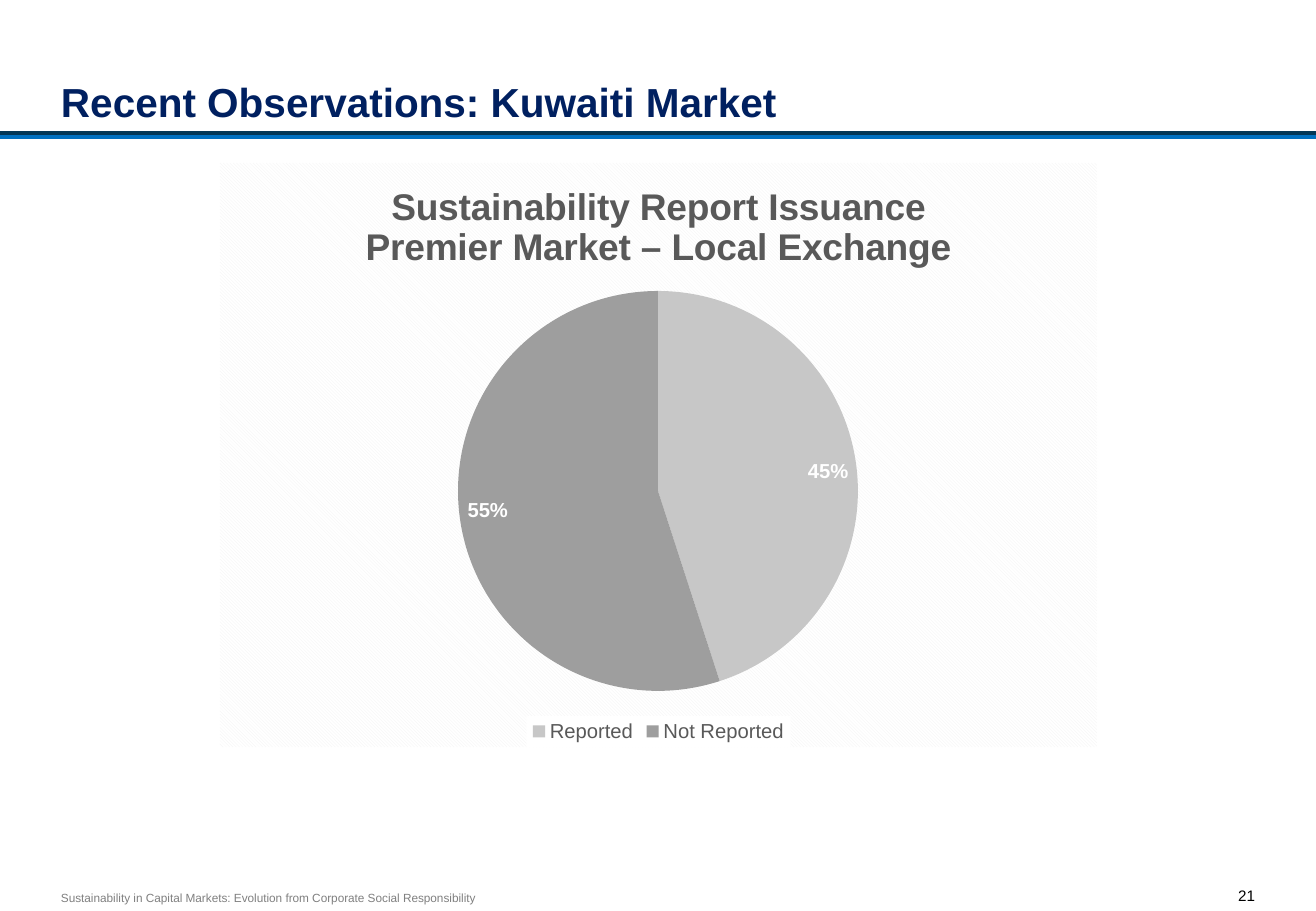
from dataclasses import dataclass

from lxml import etree
from pptx import Presentation
from pptx.chart.data import CategoryChartData
from pptx.dml.color import RGBColor
from pptx.enum.chart import XL_CHART_TYPE, XL_LABEL_POSITION, XL_LEGEND_POSITION
from pptx.enum.shapes import MSO_CONNECTOR
from pptx.enum.text import MSO_ANCHOR, PP_ALIGN
from pptx.oxml import parse_xml
from pptx.oxml.ns import nsdecls, qn
from pptx.slide import Slide
from pptx.util import Emu, Pt

PIE = XL_CHART_TYPE.PIE
INSIDE_END = XL_LABEL_POSITION.INSIDE_END
LEGEND_BOTTOM = XL_LEGEND_POSITION.BOTTOM
STRAIGHT = MSO_CONNECTOR.STRAIGHT
BOTTOM, MIDDLE = MSO_ANCHOR.BOTTOM, MSO_ANCHOR.MIDDLE
LEFT, RIGHT = PP_ALIGN.LEFT, PP_ALIGN.RIGHT

EMU_PER_PX = 7526
SLIDE_WIDTH, SLIDE_HEIGHT = 1316, 911


@dataclass(frozen=True)
class Theme:
    font: str = "Arial"
    title: str = "002060"
    rule: str = "023757"
    rule_shadow: str = "0070C0"
    footer: str = "808080"
    black: str = "000000"
    white: str = "FFFFFF"
    chart_text: str = "595959"
    pattern: str = "F2F2F2"
    title_size: int = 24
    chart_title_size: int = 22
    chart_size: int = 12
    number_size: int = 9
    footer_size: int = 7


@dataclass(frozen=True)
class Box:
    left: int
    top: int
    width: int
    height: int

    def emu(self) -> tuple[Emu, Emu, Emu, Emu]:
        return px(self.left), px(self.top), px(self.width), px(self.height)


@dataclass(frozen=True)
class Label:
    text: str
    box: Box
    size: int
    color: str
    align: PP_ALIGN


@dataclass(frozen=True)
class Rule:
    y: int
    color: str


@dataclass(frozen=True)
class Slice:
    name: str
    value: int
    color: str


THEME = Theme()
TITLE = "Recent Observations: Kuwaiti Market"
TITLE_BOX = Box(61, 22, 1194, 110)
CHART_TITLE = "Sustainability Report Issuance\nPremier Market – Local Exchange"
CHART_BOX = Box(220, 163, 877, 584)
PIE_BOX = Box(458, 291, 400, 400)
RULES = [Rule(137, THEME.rule_shadow), Rule(133, THEME.rule)]
SLICES = [Slice("Reported", 45, "C7C7C7"), Slice("Not Reported", 55, "9E9E9E")]
LABELS = [
    Label("Sustainability in Capital Markets: Evolution from Corporate Social Responsibility",
          Box(61, 890, 600, 15), THEME.footer_size, THEME.footer, LEFT),
    Label("21", Box(1195, 887, 60, 17), THEME.number_size, THEME.black, RIGHT),
]


def px(length: int) -> Emu:
    return Emu(length * EMU_PER_PX)


def style_font(font, size: int, color: str, bold: bool = False) -> None:
    font.name = THEME.font
    font.size = Pt(size)
    font.bold = bold
    font.color.rgb = RGBColor.from_string(color)


def add_title(slide: Slide) -> None:
    title = slide.shapes.title
    title.left, title.top, title.width, title.height = TITLE_BOX.emu()
    frame = title.text_frame
    frame.text = TITLE
    frame.margin_left = frame.margin_right = 0
    frame.vertical_anchor = BOTTOM
    paragraph = frame.paragraphs[0]
    paragraph.alignment = LEFT
    style_font(paragraph.runs[0].font, THEME.title_size, THEME.title, True)


def add_rule(slide: Slide, rule: Rule) -> None:
    line = slide.shapes.add_connector(STRAIGHT, 0, px(rule.y), px(SLIDE_WIDTH), px(rule.y))
    line.line.width = Pt(2.25)
    line.line.color.rgb = RGBColor.from_string(rule.color)
    etree.SubElement(line._element.spPr, qn("a:effectLst"))


def add_label(slide: Slide, label: Label) -> None:
    frame = slide.shapes.add_textbox(*label.box.emu()).text_frame
    frame.margin_left = frame.margin_right = frame.margin_top = frame.margin_bottom = 0
    frame.word_wrap = True
    frame.vertical_anchor = MIDDLE
    frame.text = label.text
    paragraph = frame.paragraphs[0]
    paragraph.alignment = label.align
    style_font(paragraph.runs[0].font, label.size, label.color)


def area_format(fill: str):
    return parse_xml(f'<c:spPr {nsdecls("c", "a")}>{fill}<a:ln><a:noFill/></a:ln></c:spPr>')


def place_pie(plot_area) -> None:
    """Fix the pie inside the chart, as fractions of the chart's size."""
    for layout in plot_area.findall(qn("c:layout")):
        plot_area.remove(layout)
    fractions = {
        "x": (PIE_BOX.left - CHART_BOX.left) / CHART_BOX.width,
        "y": (PIE_BOX.top - CHART_BOX.top) / CHART_BOX.height,
        "w": PIE_BOX.width / CHART_BOX.width,
        "h": PIE_BOX.height / CHART_BOX.height,
    }
    modes = '<c:layoutTarget val="inner"/><c:xMode val="edge"/><c:yMode val="edge"/>'
    values = "".join(f'<c:{key} val="{value:.4f}"/>' for key, value in fractions.items())
    plot_area.insert(0, parse_xml(
        f'<c:layout {nsdecls("c")}><c:manualLayout>{modes}{values}</c:manualLayout></c:layout>'))


def add_pie(slide: Slide) -> None:
    data = CategoryChartData()
    data.categories = [part.name for part in SLICES]
    data.add_series("Series 1", [part.value for part in SLICES])
    chart = slide.shapes.add_chart(PIE, *CHART_BOX.emu(), data).chart
    style_font(chart.font, THEME.chart_size, THEME.chart_text)

    # Chart title
    chart.has_title = True
    chart.chart_title.include_in_layout = False
    title_frame = chart.chart_title.text_frame
    title_frame.text = CHART_TITLE
    for paragraph in title_frame.paragraphs:
        style_font(paragraph.runs[0].font, THEME.chart_title_size, THEME.chart_text, True)

    # Legend
    chart.has_legend = True
    legend = chart.legend
    legend.position = LEGEND_BOTTOM
    legend.include_in_layout = False
    style_font(legend.font, THEME.chart_size, THEME.chart_text)
    white_fill = f'<a:solidFill><a:srgbClr val="{THEME.white}"/></a:solidFill>'
    legend._element.find(qn("c:overlay")).addnext(area_format(white_fill))

    # Slices and percentages
    plot = chart.plots[0]
    plot.vary_by_categories = True
    for index, part in enumerate(SLICES):
        fill = plot.series[0].points[index].format.fill
        fill.solid()
        fill.fore_color.rgb = RGBColor.from_string(part.color)
    plot.has_data_labels = True
    labels = plot.data_labels
    labels.show_value = False
    labels.show_percentage = True
    labels.number_format = "0%"
    labels.number_format_is_linked = False
    labels.position = INSIDE_END
    style_font(labels.font, THEME.chart_size, THEME.white, True)

    # Patterned background and pie position
    chart_element = chart._chartSpace.find(qn("c:chart"))
    chart_element.addnext(area_format(
        f'<a:pattFill prst="dkDnDiag"><a:fgClr><a:srgbClr val="{THEME.pattern}"/></a:fgClr>'
        f'<a:bgClr><a:srgbClr val="{THEME.white}"/></a:bgClr></a:pattFill>'))
    place_pie(chart_element.find(qn("c:plotArea")))


def main() -> None:
    presentation = Presentation()
    presentation.slide_width, presentation.slide_height = px(SLIDE_WIDTH), px(SLIDE_HEIGHT)
    slide = presentation.slides.add_slide(presentation.slide_layouts[5])
    for rule in RULES:
        add_rule(slide, rule)
    for label in LABELS:
        add_label(slide, label)
    add_title(slide)
    add_pie(slide)
    presentation.save("out.pptx")


if __name__ == "__main__":
    main()
